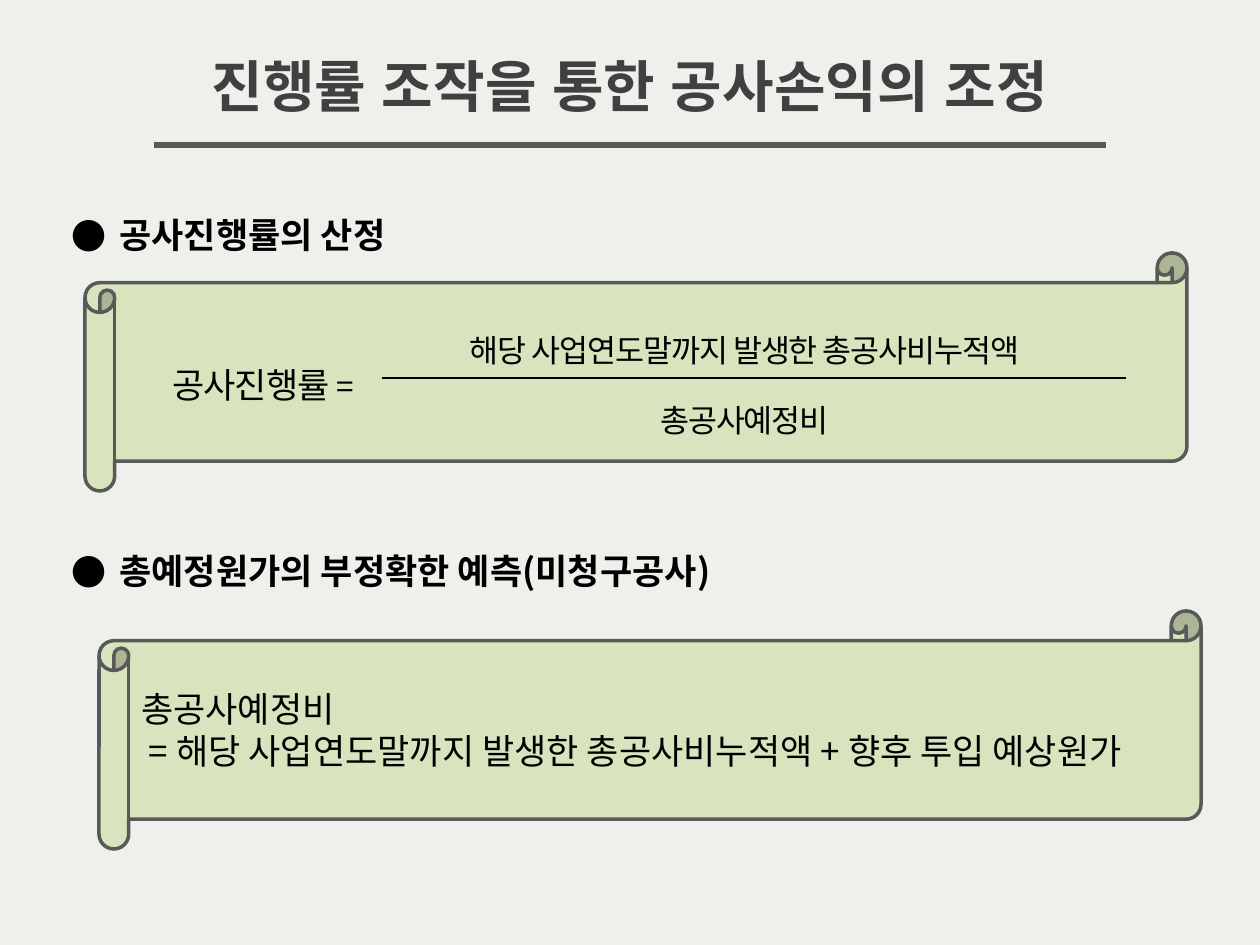
from lxml import etree
from pptx import Presentation
from pptx.dml.color import RGBColor
from pptx.enum.shapes import MSO_CONNECTOR, MSO_SHAPE
from pptx.enum.text import MSO_ANCHOR, PP_ALIGN
from pptx.oxml.ns import qn
from pptx.util import Pt

LINE = MSO_CONNECTOR.STRAIGHT
SCROLL = MSO_SHAPE.HORIZONTAL_SCROLL
MIDDLE, TOP = MSO_ANCHOR.MIDDLE, MSO_ANCHOR.TOP
LEFT, CENTER, RIGHT = PP_ALIGN.LEFT, PP_ALIGN.CENTER, PP_ALIGN.RIGHT
KOREAN = "Noto Sans CJK KR"
NO_GRID = "{2D5ABB26-0587-4C30-8999-92F81FD0307C}"
COLORS = {"back": "EEF0EC", "title": "404040", "rule": "595959",
          "scroll": "D7E4BD", "text": "000000"}


def px(n):
    return round(n * 914400 / 126)


def color(name):
    return RGBColor.from_string(COLORS[name])


def add_run(para, text, size, font=KOREAN, tint="text", bold=False, gap=0):
    run = para.add_run()
    run.text = text
    run.font.size, run.font.bold, run.font.name = Pt(size), bold, font
    run.font.color.rgb = color(tint)
    props = run._r.get_or_add_rPr()
    etree.SubElement(props, qn("a:ea")).set("typeface", font)
    if gap:
        props.set("spc", str(gap))


def add_line(slide, x, y, width, tint, weight):
    line = slide.shapes.add_connector(LINE, px(x), px(y), px(x + width), px(y))
    line.line.color.rgb = color(tint)
    line.line.width = Pt(weight)
    etree.SubElement(line._element.spPr, qn("a:effectLst"))


def add_box(slide, x, y, w, h):
    frame = slide.shapes.add_textbox(px(x), px(y), px(w), px(h)).text_frame
    frame.word_wrap = True
    return frame.paragraphs[0]


def add_title(slide, x, y, w, h, text):
    # Rule under the title
    add_line(slide, x + 5, y + 100, w - 10, "rule", 3)
    para = add_box(slide, x, y, w, h)
    para.alignment = CENTER
    add_run(para, text, 32, "Arial", "title", True)


def add_head(slide, x, y, w, h, text):
    para = add_box(slide, x, y, w, h)
    props = para._p.get_or_add_pPr()
    props.set("marL", str(px(48)))
    props.set("indent", str(-px(48)))
    etree.SubElement(props, qn("a:buFont")).set("typeface", KOREAN)
    etree.SubElement(props, qn("a:buChar")).set("char", "●")
    add_run(para, text, 20, bold=True)


def add_scroll(slide, x, y, w, h, lines=()):
    shape = slide.shapes.add_shape(SCROLL, px(x), px(y), px(w), px(h))
    shape.shadow.inherit = False
    shape.fill.solid()
    shape.fill.fore_color.rgb = color("scroll")
    shape.line.color.rgb = color("rule")
    shape.line.width = Pt(2)
    frame = shape.text_frame
    frame.word_wrap = True
    frame.vertical_anchor = MIDDLE
    for i, text in enumerate(lines):
        para = frame.add_paragraph() if i else frame.paragraphs[0]
        para.alignment = LEFT
        add_run(para, text, 20)


def fill_cell(cell, align, anchor, runs):
    cell.vertical_anchor = anchor
    para = cell.text_frame.paragraphs[0]
    para.alignment = align
    para.line_spacing = 1.4
    for text, size in runs:
        add_run(para, text, size, gap=-60)


def add_ratio(slide, x, y, w, h):
    frame = slide.shapes.add_table(2, 3, px(x), px(y), px(w), px(h))
    table = frame.table
    table.first_row = table.horz_banding = False
    table._tbl.tblPr.find(qn("a:tableStyleId")).text = NO_GRID
    sides = (203, w - 203 - 14, 14)
    for col, width in zip(table.columns, sides):
        col.width = px(width)
    for row, height in zip(table.rows, (71, h - 71)):
        row.height = px(height)
    for cell in table.iter_cells():
        cell.fill.background()
        cell.margin_left = cell.margin_right = px(3)
        cell.margin_top = cell.margin_bottom = px(3)
    for col in (0, 2):
        table.cell(0, col).merge(table.cell(1, col))

    # Name on the left, numerator over denominator
    fill_cell(table.cell(0, 0), RIGHT, MIDDLE, [("공사진행률", 20), (" =", 18)])
    fill_cell(table.cell(0, 1), CENTER, MIDDLE,
              [("해당 사업연도말까지 발생한 총공사비누적액", 18)])
    fill_cell(table.cell(1, 1), CENTER, TOP, [("총공사예정비", 18)])
    # Fraction bar
    add_line(slide, x + 228, y + 74, 744, "text", 1.5)


def main():
    deck = Presentation()
    deck.slide_width, deck.slide_height = px(1260), px(945)
    slide = deck.slides.add_slide(deck.slide_layouts[6])
    slide.background.fill.solid()
    slide.background.fill.fore_color.rgb = color("back")

    add_title(slide, 149, 45, 962, 78, "진행률 조작을 통한 공사손익의 조정")
    # Progress rate
    add_head(slide, 59, 207, 1142, 64, "공사진행률의 산정")
    add_scroll(slide, 85, 253, 1102, 238)
    add_ratio(slide, 154, 304, 992, 139)
    # Expected total cost
    add_head(slide, 59, 543, 1142, 64, "총예정원가의 부정확한 예측(미청구공사)")
    add_scroll(slide, 99, 611, 1102, 238, (
        "총공사예정비",
        " = 해당 사업연도말까지 발생한 총공사비누적액 + 향후 투입 예상원가"))
    deck.save("out.pptx")


if __name__ == "__main__":
    main()
